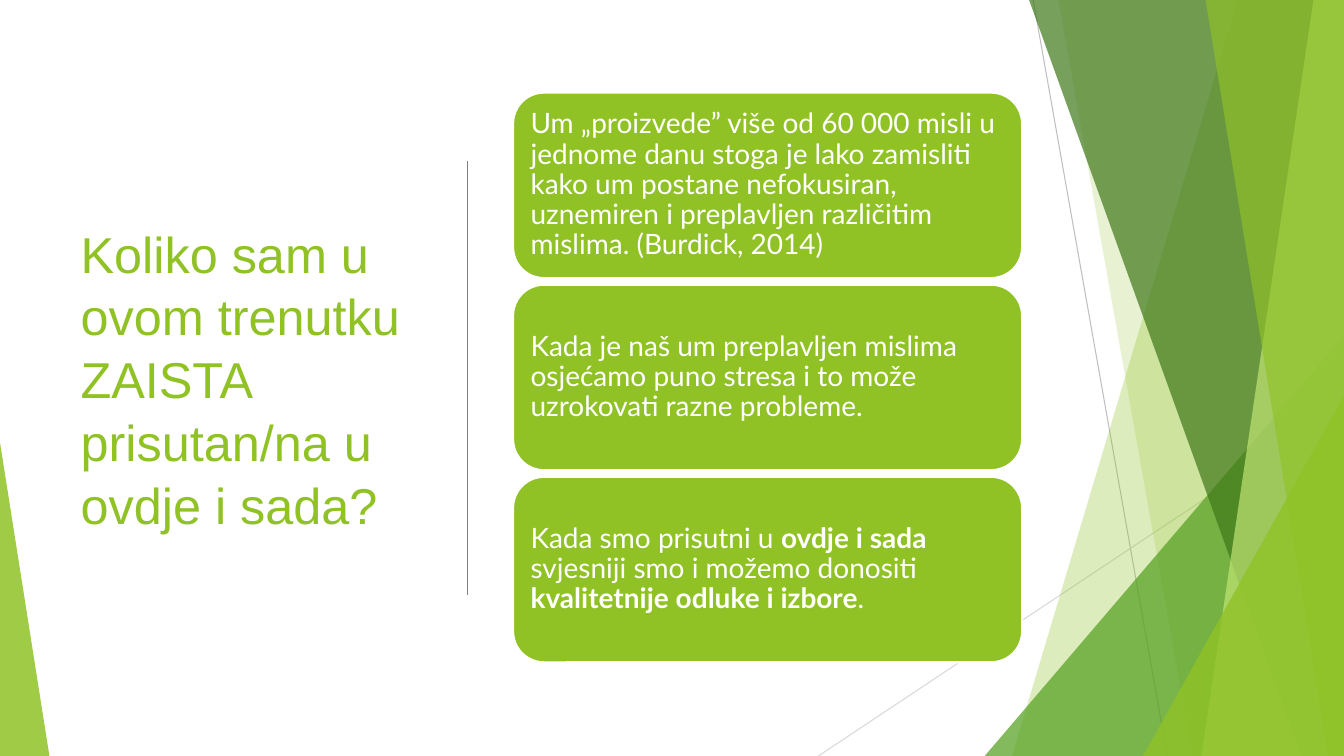
from dataclasses import dataclass

import lxml.etree
import pptx
import pptx.dml.color
import pptx.enum.shapes
import pptx.enum.text
import pptx.oxml.ns
import pptx.util

Pt = pptx.util.Pt
Shape = pptx.enum.shapes.MSO_SHAPE
Anchor = pptx.enum.text.MSO_ANCHOR
Align = pptx.enum.text.PP_ALIGN
qn = pptx.oxml.ns.qn

SLIDE_WIDTH, SLIDE_HEIGHT = 960, 540


@dataclass(frozen=True)
class Theme:
    lime: str = "90C226"
    green: str = "54A021"
    forest: str = "3F7819"
    pale_lime: str = "C0E474"
    white: str = "FFFFFF"
    divider: str = "7F7F7F"
    dark_hairline: str = "BFBFBF"
    light_hairline: str = "D9D9D9"
    title_font: str = "Arial"
    card_font: str = "Lato"
    title_size: float = 36
    card_size: float = 20


class SlideBuilder:
    def __init__(self, slide, theme):
        self.slide = slide
        self.theme = theme

    def fill(self, shape, color, opacity=100):
        """Fill a shape with a colour at a percentage of opacity, without shadow."""
        shape.shadow.inherit = False
        shape.fill.solid()
        shape.fill.fore_color.rgb = pptx.dml.color.RGBColor.from_string(color)
        if opacity < 100:
            color_element = shape.fill._xPr.find(qn("a:solidFill"))[0]
            alpha = lxml.etree.SubElement(color_element, qn("a:alpha"))
            alpha.set("val", str(opacity * 1000))

    def set_font(self, paragraph, name, size, color):
        paragraph.font.name = name
        paragraph.font.size = Pt(size)
        paragraph.font.color.rgb = pptx.dml.color.RGBColor.from_string(color)

    def line(self, start, end, color, width):
        connector = self.slide.shapes.add_connector(
            pptx.enum.shapes.MSO_CONNECTOR.STRAIGHT,
            *(Pt(length) for length in (*start, *end)))
        connector.line.color.rgb = pptx.dml.color.RGBColor.from_string(color)
        connector.line.width = Pt(width)
        lxml.etree.SubElement(connector._element.spPr, qn("a:effectLst"))

    def band(self, top_x, bottom_x, color, opacity):
        """Draw a full-height band from a slanted edge to the slide's right side."""
        outline = self.slide.shapes.build_freeform(Pt(top_x), 0)
        outline.add_line_segments([
            (Pt(SLIDE_WIDTH), 0),
            (Pt(SLIDE_WIDTH), Pt(SLIDE_HEIGHT)),
            (Pt(bottom_x), Pt(SLIDE_HEIGHT)),
        ], close=True)
        band = outline.convert_to_shape()
        self.fill(band, color, opacity)
        band.line.fill.background()

    def corner(self, left, top, width, apex, color, opacity):
        """Draw a triangle on the slide's bottom edge; apex 0 is left, 1 is right."""
        corner = self.slide.shapes.add_shape(
            Shape.ISOSCELES_TRIANGLE, Pt(left), Pt(top), Pt(width),
            Pt(SLIDE_HEIGHT - top))
        corner.adjustments[0] = apex
        self.fill(corner, color, opacity)
        corner.line.fill.background()

    def title(self, text, left, top, width, height):
        title = self.slide.shapes.title
        title.left, title.top = Pt(left), Pt(top)
        title.width, title.height = Pt(width), Pt(height)
        frame = title.text_frame
        frame.text = text
        frame.word_wrap = True
        frame.auto_size = pptx.enum.text.MSO_AUTO_SIZE.NONE
        frame.vertical_anchor = Anchor.MIDDLE
        paragraph = frame.paragraphs[0]
        paragraph.alignment = Align.LEFT
        paragraph.line_spacing = 1.04
        self.set_font(paragraph, self.theme.title_font, self.theme.title_size,
                      self.theme.lime)

    def card(self, lines, left, top, width, height):
        """Draw a rounded card; each line is a list of (text, bold) pairs."""
        card = self.slide.shapes.add_shape(
            Shape.ROUNDED_RECTANGLE, Pt(left), Pt(top), Pt(width), Pt(height))
        self.fill(card, self.theme.lime)
        card.line.color.rgb = pptx.dml.color.RGBColor.from_string(self.theme.white)
        card.line.width = Pt(1.5)
        frame = card.text_frame
        frame.word_wrap = True
        frame.vertical_anchor = Anchor.MIDDLE
        frame.margin_left = frame.margin_right = Pt(6)
        frame.margin_top = frame.margin_bottom = Pt(6)
        paragraph = frame.paragraphs[0]
        paragraph.alignment = Align.LEFT
        paragraph.line_spacing = 0.9
        self.set_font(paragraph, self.theme.card_font, self.theme.card_size,
                      self.theme.white)
        for number, line in enumerate(lines):
            if number:
                paragraph.add_line_break()
            for text, bold in line:
                run = paragraph.add_run()
                run.text = text
                if bold:
                    run.font.bold = True


def draw_backdrop(builder):
    theme = builder.theme
    builder.line((738, 0), (833.8, 540), theme.dark_hairline, 0.75)
    builder.line((960, 290.2), (584.6, 540), theme.light_hairline, 0.75)
    builder.band(884.2, 722.9, theme.lime, 30)
    builder.band(756, 851.8, theme.lime, 20)
    builder.corner(703.4, 239.8, 256.6, 1, theme.green, 72)
    builder.band(735.1, 929.5, theme.forest, 70)
    builder.band(938.2, 858.2, theme.pale_lime, 70)
    builder.band(861.1, 949, theme.lime, 65)
    builder.corner(816.5, 283, 143.5, 1, theme.lime, 80)
    builder.corner(0, 316.1, 35.3, 0, theme.lime, 85)


CARDS = [
    [[("Um „proizvede” više od 60 000 misli u jednome danu stoga je lako "
       "zamisliti kako um postane nefokusiran, uznemiren i preplavljen "
       "različitim mislima. (Burdick, 2014)", False)]],
    [[("Kada je naš um preplavljen mislima", False)],
     [("osjećamo puno stresa i to može uzrokovati razne probleme.", False)]],
    [[("Kada smo prisutni u ", False), ("ovdje i sada", True)],
     [("svjesniji smo i možemo donositi ", False),
      ("kvalitetnije odluke i izbore", True), (".", False)]],
]
CARD_TOP, CARD_HEIGHT, CARD_PITCH = 66.2, 132.5, 137.2


def main():
    presentation = pptx.Presentation()
    presentation.slide_width = Pt(SLIDE_WIDTH)
    presentation.slide_height = Pt(SLIDE_HEIGHT)
    title_only = presentation.slide_layouts[5]
    builder = SlideBuilder(presentation.slides.add_slide(title_only), Theme())

    draw_backdrop(builder)
    builder.line((334.1, 115.2), (334.1, 424.8), builder.theme.divider, 1)
    builder.title("Koliko sam u ovom trenutku ZAISTA prisutan/na u ovdje i sada?",
                  50.4, 64.1, 265, 411.1)
    for row, lines in enumerate(CARDS):
        builder.card(lines, 366.5, CARD_TOP + row * CARD_PITCH, 363.6, CARD_HEIGHT)

    presentation.save("out.pptx")


if __name__ == "__main__":
    main()
